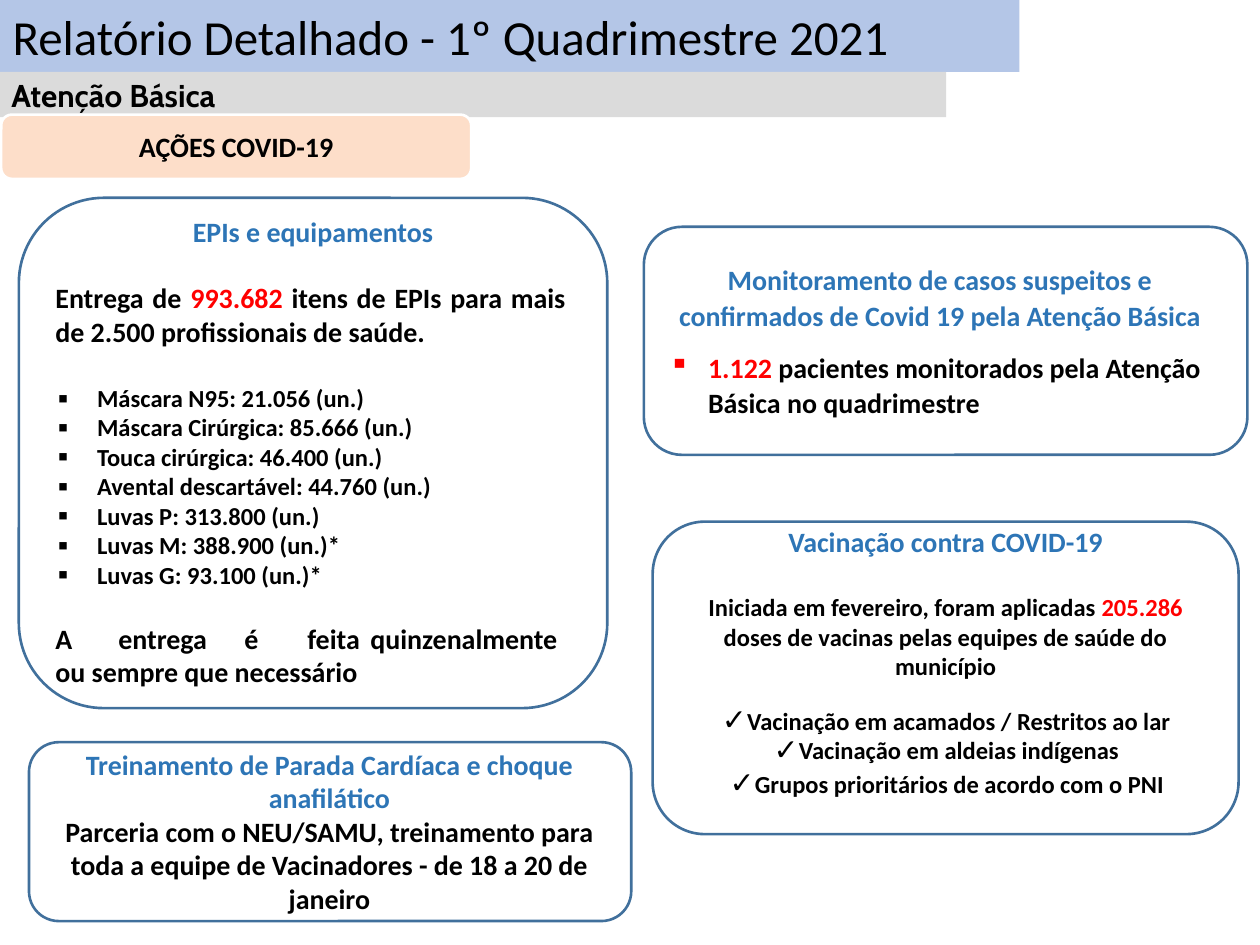
from dataclasses import dataclass
from typing import NamedTuple, Optional

from lxml import etree
from pptx import Presentation
from pptx.dml.color import RGBColor
from pptx.enum import shapes, text
from pptx.oxml.ns import qn
from pptx.util import Inches, Pt

COLORS = {
    "ink": "000000", "heading": "2D75B6", "figure": "FF0000",
    "outline": "41709C", "title_bar": "B4C6E7", "section_bar": "DBDBDB",
    "topic": "FDDEC9", "white": "FFFFFF",
}
LEFT, CENTER, JUSTIFY = text.PP_ALIGN.LEFT, text.PP_ALIGN.CENTER, text.PP_ALIGN.JUSTIFY
RECT = shapes.MSO_SHAPE.RECTANGLE
ROUNDED = shapes.MSO_SHAPE.ROUNDED_RECTANGLE


class Box(NamedTuple):
    left: float
    top: float
    width: float
    height: float

    def lengths(self) -> list:
        return [Inches(value) for value in self]


class Run(NamedTuple):
    text: str
    color: str = "ink"


@dataclass
class Para:
    runs: list
    size: float = 16
    align: int = LEFT
    bold: bool = True
    font: str = "Calibri"
    bullet: str = ""
    bullet_percent: int = 100
    indent: float = 0
    hanging: float = 0
    tabs: tuple = ()
    spacing: Optional[object] = None
    before: float = 0


def rgb(name: str) -> RGBColor:
    return RGBColor.from_string(COLORS[name])


def set_indents(paragraph, para: Para) -> None:
    """Write margins, bullet and tab stops."""
    props = paragraph._p.get_or_add_pPr()
    props.set("marL", str(Inches(para.indent)))
    props.set("indent", str(-Inches(para.hanging)))
    if para.bullet:
        size = etree.SubElement(props, qn("a:buSzPct"))
        size.set("val", str(para.bullet_percent * 1000))
        etree.SubElement(props, qn("a:buChar")).set("char", para.bullet)
    else:
        etree.SubElement(props, qn("a:buNone"))
    if para.tabs:
        stops = etree.SubElement(props, qn("a:tabLst"))
        for position in para.tabs:
            etree.SubElement(stops, qn("a:tab"), pos=str(Inches(position)), algn="l")


def write(shape, paras: list, anchor=text.MSO_ANCHOR.TOP, inset: float = 0) -> None:
    frame = shape.text_frame
    frame.word_wrap = True
    frame.auto_size = text.MSO_AUTO_SIZE.NONE
    frame.vertical_anchor = anchor
    frame.margin_left = Inches(inset)
    frame.margin_right = frame.margin_top = frame.margin_bottom = 0
    for index, para in enumerate(paras):
        paragraph = frame.add_paragraph() if index else frame.paragraphs[0]
        set_indents(paragraph, para)
        paragraph.alignment = para.align
        paragraph.space_before = Pt(para.before)
        if para.spacing:
            paragraph.line_spacing = para.spacing
        for part in para.runs:
            if part.text == "\n":
                paragraph.add_line_break()
                continue
            run = paragraph.add_run()
            run.text = part.text
            run.font.name = para.font
            run.font.size = Pt(para.size)
            run.font.bold = para.bold
            run.font.color.rgb = rgb(part.color)


def add_panel(slide, kind, box: Box, fill: str = "", line: str = ""):
    panel = slide.shapes.add_shape(kind, *box.lengths())
    panel.shadow.inherit = False
    if fill:
        panel.fill.solid()
        panel.fill.fore_color.rgb = rgb(fill)
    else:
        panel.fill.background()
    if line:
        panel.line.color.rgb = rgb(line)
        panel.line.width = Pt(1.5)
    else:
        panel.line.fill.background()
    return panel


def place(shape, box: Box) -> None:
    shape.left, shape.top, shape.width, shape.height = box.lengths()


def heading(words: str, **options) -> Para:
    return Para([Run(words, "heading")], align=CENTER, **options)


CARDS = [
    Box(0.15, 1.57, 4.67, 4.05),
    Box(5.11, 1.8, 4.79, 1.81),
    Box(0.23, 5.89, 4.78, 1.42),
    Box(5.18, 4.14, 4.65, 2.48),
]

TEXTS = [
    (Box(0.43, 1.7, 4.11, 0.29), [heading("EPIs e equipamentos")]),
    (Box(0.44, 2.23, 4.05, 0.56), [
        Para([Run("Entrega de "), Run("993.682", "figure"),
              Run(" itens de EPIs para mais de 2.500 profissionais de saúde.")],
             align=JUSTIFY)]),
    (Box(0.44, 4.93, 4.1, 0.56), [
        Para([Run("A\tentrega\té\tfeita\tquinzenalmente"), Run("\n"),
              Run("ou sempre que necessário")],
             tabs=(0.34, 1.25, 1.56, 2.17))]),
    (Box(5.29, 2.07, 4.34, 1.28), [
        heading("Monitoramento de casos suspeitos e confirmados de Covid 19 "
                "pela Atenção Básica", spacing=1.06),
        Para([Run("1.122 ", "figure"),
              Run("pacientes monitorados pela Atenção Básica no quadrimestre")],
             bullet="▪", indent=0.33, hanging=0.31, spacing=1.06, before=9.4)]),
    (Box(0.5, 5.93, 4.23, 1.36), [
        heading("Treinamento de Parada Cardíaca e choque anafilático"),
        Para([Run("Parceria com o NEU/SAMU, treinamento para toda a equipe de "
                  "Vacinadores - de 18 a 20 de janeiro")], align=CENTER)]),
    (Box(6.0, 4.16, 3.01, 0.29), [heading("Vacinação contra COVID-19")]),
    (Box(5.52, 4.7, 3.97, 0.73), [
        Para([Run("Iniciada em fevereiro, foram aplicadas "), Run("205.286", "figure"),
              Run(" doses de vacinas pelas equipes de saúde do município")],
             size=14, align=CENTER)]),
]

SUPPLIES = [
    "Máscara N95: 21.056 (un.)",
    "Máscara Cirúrgica: 85.666 (un.)",
    "Touca cirúrgica: 46.400 (un.)",
    "Avental descartável: 44.760 (un.)",
    "Luvas P: 313.800 (un.)",
    "Luvas M: 388.900 (un.)*",
    "Luvas G: 93.100 (un.)*",
]

# wording, indent in inches, line height in points
VACCINATIONS = [
    ("Vacinação em acamados / Restritos ao lar", 0.21, 16.2),
    ("Vacinação em aldeias indígenas", 0.62, 16.8),
    ("Grupos prioritários de acordo com o PNI", 0.27, 19.2),
]


def main() -> None:
    deck = Presentation()
    deck.slide_width, deck.slide_height = Inches(10), Inches(7.5)
    slide = deck.slides.add_slide(deck.slide_layouts[3])
    title, supplies, vaccinations = slide.placeholders
    middle = text.MSO_ANCHOR.MIDDLE

    place(title, Box(0, 0, 8.09, 0.57))
    title.fill.solid()
    title.fill.fore_color.rgb = rgb("title_bar")
    write(title, [Para([Run("Relatório Detalhado - 1º Quadrimestre 2021")],
                       size=28, bold=False)], middle, 0.1)

    section = add_panel(slide, RECT, Box(0, 0.57, 7.51, 0.36), "section_bar")
    write(section, [Para([Run("Atenção Básica")], size=18, font="Cabin")], middle, 0.09)

    topic = add_panel(slide, ROUNDED, Box(0.01, 0.91, 3.73, 0.51), "topic", "white")
    write(topic, [Para([Run("AÇÕES COVID-19")], align=CENTER)], middle)

    for card in CARDS:
        add_panel(slide, ROUNDED, card, line="outline")
    for box, paras in TEXTS:
        write(slide.shapes.add_textbox(*box.lengths()), paras)

    place(supplies, Box(0.44, 3.04, 3.4, 1.65))
    write(supplies, [Para([Run(item)], size=14, bullet="▪", bullet_percent=121,
                          indent=0.33, hanging=0.31) for item in SUPPLIES])

    place(vaccinations, Box(5.72, 5.61, 3.8, 0.74))
    write(vaccinations, [Para([Run(item)], size=14, bullet="✓", bullet_percent=121,
                              indent=indent, hanging=0.2, spacing=Pt(height))
                         for item, indent, height in VACCINATIONS])

    deck.save("out.pptx")


if __name__ == "__main__":
    main()
